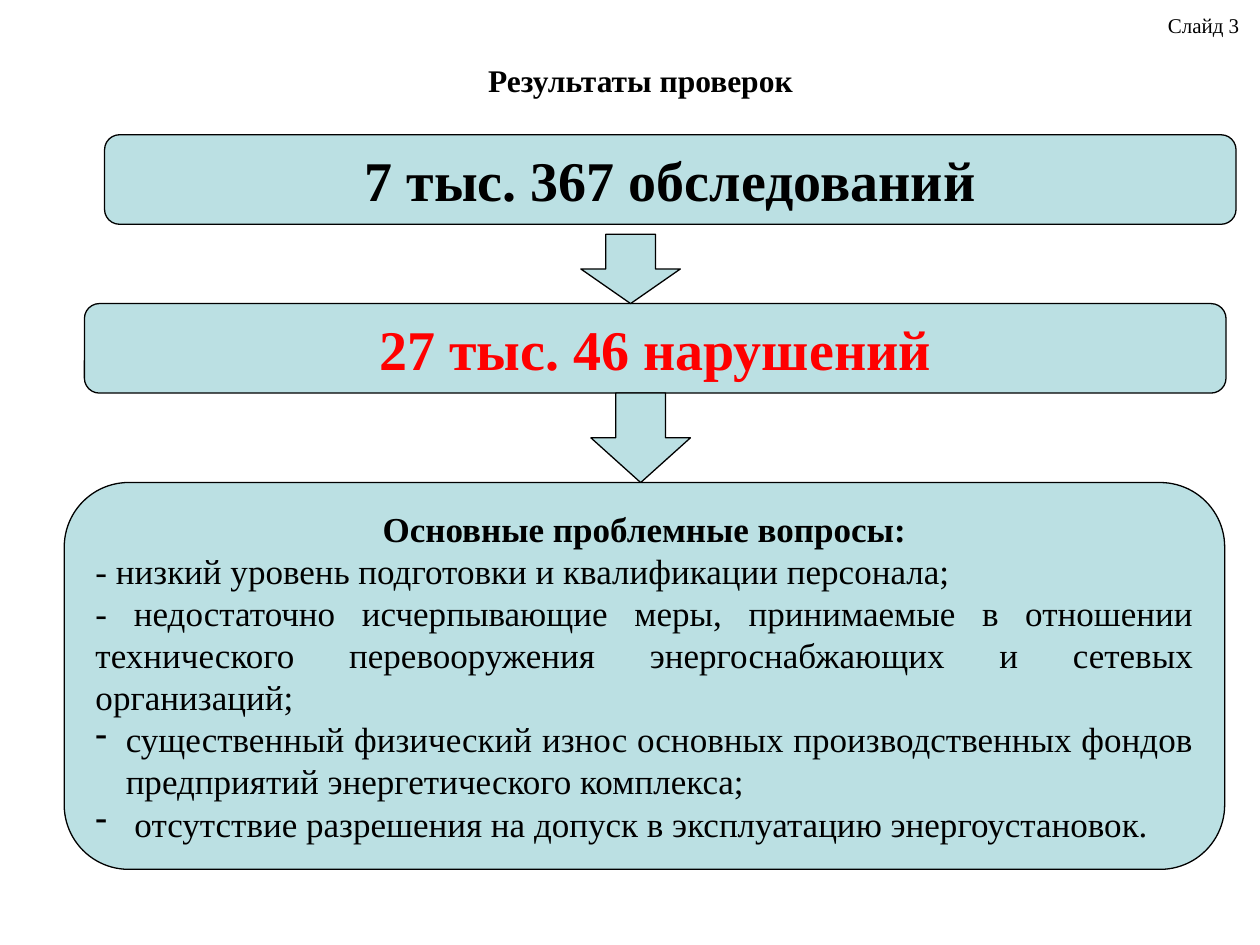
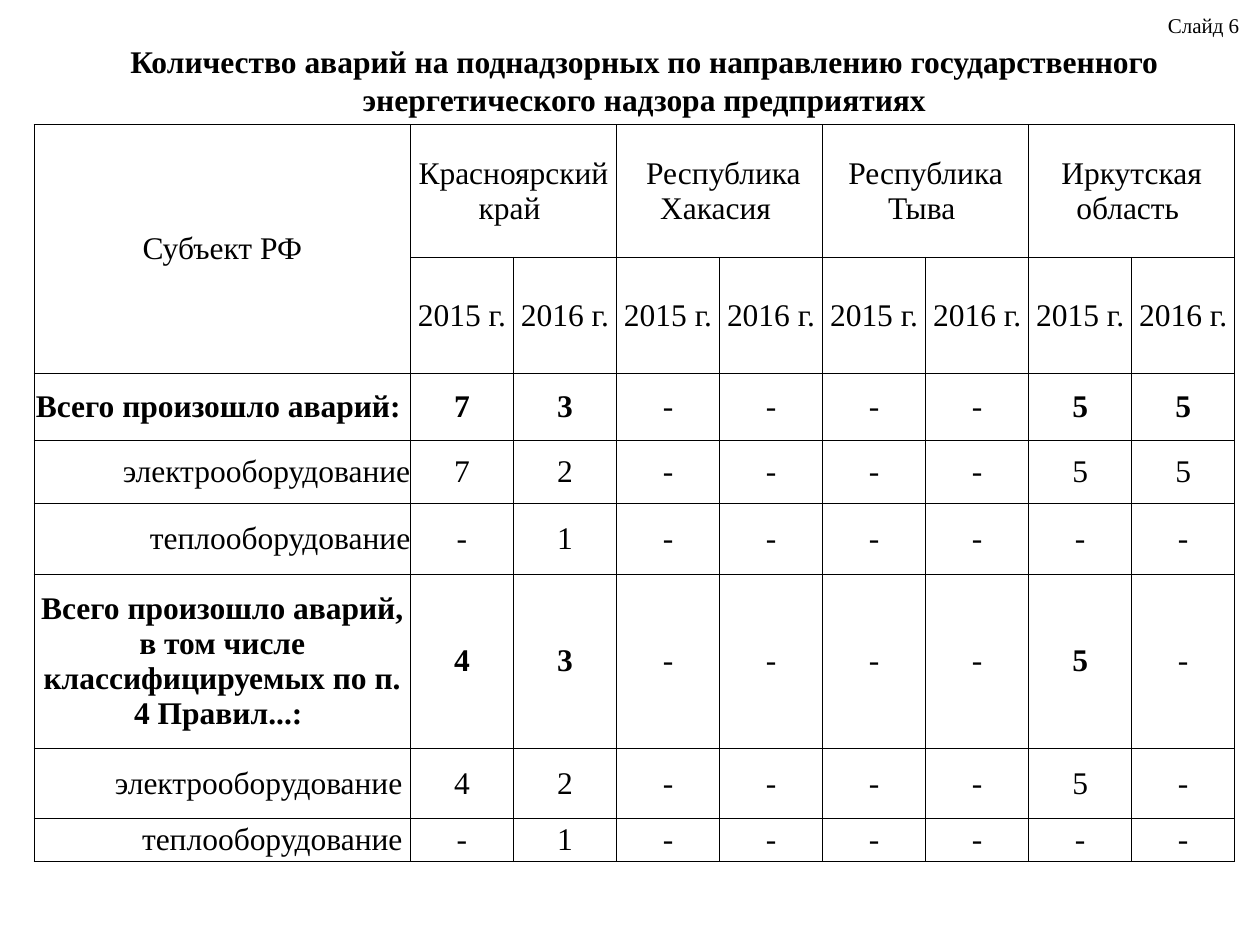
from dataclasses import dataclass

from lxml import etree
from pptx import Presentation
from pptx.dml.color import RGBColor
from pptx.enum.shapes import MSO_SHAPE
from pptx.enum.text import MSO_ANCHOR, PP_ALIGN
from pptx.oxml.ns import qn
from pptx.util import Inches, Pt

ROUNDED, DOWN_ARROW = MSO_SHAPE.ROUNDED_RECTANGLE, MSO_SHAPE.DOWN_ARROW
TOP, MIDDLE = MSO_ANCHOR.TOP, MSO_ANCHOR.MIDDLE
LEFT, CENTER = PP_ALIGN.LEFT, PP_ALIGN.CENTER
RIGHT, JUSTIFY = PP_ALIGN.RIGHT, PP_ALIGN.JUSTIFY

COLORS = {"ink": "000000", "alert": "FF0000", "panel": "BBE0E3"}
FONT = "Times New Roman"
DASH_INDENT = Inches(0.24)


@dataclass
class Box:
    left: float
    top: float
    width: float
    height: float

    def inner(self, x, y, w, h):
        """Inner box, given in percent of this one."""
        return Box(self.left + self.width * x / 100, self.top + self.height * y / 100,
                   self.width * w / 100, self.height * h / 100)

    def emu(self):
        return [Inches(v) for v in (self.left, self.top, self.width, self.height)]


SLIDE = Box(0, 0, 10, 7.5)
NUMBER = SLIDE.inner(91.7, 0.67, 7.9, 4.8)
TITLE = SLIDE.inner(4.3, 4.8, 93.7, 7.33)
FLOW = SLIDE.inner(5.1, 14.27, 93, 77.73)
ACCIDENTS = SLIDE.inner(2.7, 13.2, 95.3, 78)

PROBLEMS = [
    # text, dash set as a bullet
    ("- низкий уровень подготовки и квалификации персонала;", False),
    ("- недостаточно исчерпывающие меры, принимаемые в отношении технического "
     "перевооружения энергоснабжающих и сетевых организаций;", False),
    ("существенный физический износ основных производственных фондов "
     "предприятий энергетического комплекса;", True),
    (" отсутствие разрешения на допуск в эксплуатацию энергоустановок.", True),
]

REGIONS = ["Красноярский край ", " Республика Хакасия ", "Республика Тыва ",
           "Иркутская область "]
YEARS = ["2015 г.", "2016 г."]
ACCIDENT_ROWS = [
    # label, values by region and year, total row
    ("Всего произошло аварий: ", "7 3 - - - - 5 5", True),
    ("электрооборудование", "7 2 - - - - 5 5", False),
    ("теплооборудование", "- 1 - - - - - -", False),
    ("Всего произошло аварий, в том числе классифицируемых по п. 4 Правил...: ",
     "4 3 - - - - 5 -", True),
    ("электрооборудование ", "4 2 - - - - 5 -", False),
    ("теплооборудование ", "- 1 - - - - - -", False),
]
LABEL_SHARE = 31.35
ROW_SHARES = [17.98, 15.75, 9.08, 8.56, 9.59, 23.63, 9.59, 5.82]


def write(paragraph, text, size, bold=False, color="ink", align=CENTER):
    paragraph.alignment = align
    run = paragraph.add_run()
    run.text = text
    run.font.name, run.font.size, run.font.bold = FONT, Pt(size), bold
    run.font.color.rgb = RGBColor.from_string(COLORS[color])


def add_label(slide, box, text, size, bold=False, align=CENTER, anchor=TOP):
    frame = slide.shapes.add_textbox(*box.emu()).text_frame
    frame.word_wrap = True
    frame.vertical_anchor = anchor
    write(frame.paragraphs[0], text, size, bold, align=align)


def add_slide(deck, number, title):
    """Blank slide with the shared number and title."""
    slide = deck.slides.add_slide(deck.slide_layouts[6])
    add_label(slide, NUMBER, f"Слайд {number}", 12, align=LEFT)
    add_label(slide, TITLE, title, 18, bold=True, anchor=MIDDLE)
    return slide


def add_panel(slide, kind, box):
    panel = slide.shapes.add_shape(kind, *box.emu())
    panel.shadow.inherit = False
    panel.fill.solid()
    panel.fill.fore_color.rgb = RGBColor.from_string(COLORS["panel"])
    panel.line.color.rgb = RGBColor.from_string(COLORS["ink"])
    panel.line.width = Pt(0.75)
    panel.text_frame.word_wrap = True
    panel.text_frame.vertical_anchor = MIDDLE
    return panel.text_frame


def add_dash(paragraph):
    properties = paragraph._p.get_or_add_pPr()
    properties.set("marL", str(DASH_INDENT))
    properties.set("indent", str(-DASH_INDENT))
    etree.SubElement(properties, qn("a:buFontTx"))
    etree.SubElement(properties, qn("a:buChar")).set("char", "-")


def add_findings_flow(slide, box):
    """Inspections lead to violations, and these to the main problems."""
    violations = add_panel(slide, ROUNDED, box.inner(1.72, 22.98, 97.42, 12.18))
    write(violations.paragraphs[0], "27 тыс. 46 нарушений", 32, True, "alert")
    inspections = add_panel(slide, ROUNDED, box.inner(3.44, 0, 96.56, 12.18))
    write(inspections.paragraphs[0], "7 тыс. 367 обследований", 32, True)
    for x, y, height in ((44.09, 13.55, 9.43), (44.95, 35.16, 12.18)):
        add_panel(slide, DOWN_ARROW, box.inner(x, y, 8.49, height))

    problems = add_panel(slide, ROUNDED, box.inner(0, 47.34, 99.03, 52.66))
    write(problems.paragraphs[0], "Основные проблемные вопросы:", 20, True)
    for text, dashed in PROBLEMS:
        paragraph = problems.add_paragraph()
        write(paragraph, text, 20, align=JUSTIFY)
        if dashed:
            add_dash(paragraph)


def style_cell(cell):
    """Clear fill, no margins, thin line on each side."""
    cell.margin_left = cell.margin_right = cell.margin_top = cell.margin_bottom = 0
    cell.vertical_anchor = MIDDLE
    cell.fill.background()
    properties = cell._tc.get_or_add_tcPr()
    for place, side in enumerate(("lnL", "lnR", "lnT", "lnB")):
        line = etree.Element(qn(f"a:{side}"), w=str(Pt(0.5)))
        fill = etree.SubElement(line, qn("a:solidFill"))
        etree.SubElement(fill, qn("a:srgbClr")).set("val", COLORS["ink"])
        properties.insert(place, line)


def add_accident_table(slide, box):
    year_count = len(YEARS)
    value_count = len(REGIONS) * year_count
    table = slide.shapes.add_table(len(ROW_SHARES), value_count + 1, *box.emu()).table
    table.first_row = table.horz_banding = False
    value_share = (100 - LABEL_SHARE) / value_count
    for column, share in zip(table.columns, [LABEL_SHARE] + [value_share] * value_count):
        column.width = Inches(box.width * share / 100)
    for row, share in zip(table.rows, ROW_SHARES):
        row.height = Inches(box.height * share / 100)
    for cell in table.iter_cells():
        style_cell(cell)

    def fill_cell(row, column, text, bold=False, align=CENTER):
        write(table.cell(row, column).text_frame.paragraphs[0], text, 18, bold, align=align)

    table.cell(0, 0).merge(table.cell(1, 0))
    fill_cell(0, 0, "Субъект РФ")
    for index, region in enumerate(REGIONS):
        first = 1 + index * year_count
        table.cell(0, first).merge(table.cell(0, first + year_count - 1))
        fill_cell(0, first, region)
        for offset, year in enumerate(YEARS):
            fill_cell(1, first + offset, year)

    for row, (label, values, total) in enumerate(ACCIDENT_ROWS, start=2):
        fill_cell(row, 0, label, total, CENTER if total else RIGHT)
        for column, value in enumerate(values.split(), start=1):
            fill_cell(row, column, value, total and value != "-")


def main():
    deck = Presentation()
    deck.slide_width, deck.slide_height = SLIDE.emu()[2:]
    add_findings_flow(add_slide(deck, 3, "Результаты проверок "), FLOW)
    add_accident_table(
        add_slide(deck, 6, "Количество аварий на поднадзорных по направлению "
                           "государственного энергетического надзора предприятиях"),
        ACCIDENTS)
    deck.save("out.pptx")


if __name__ == "__main__":
    main()
